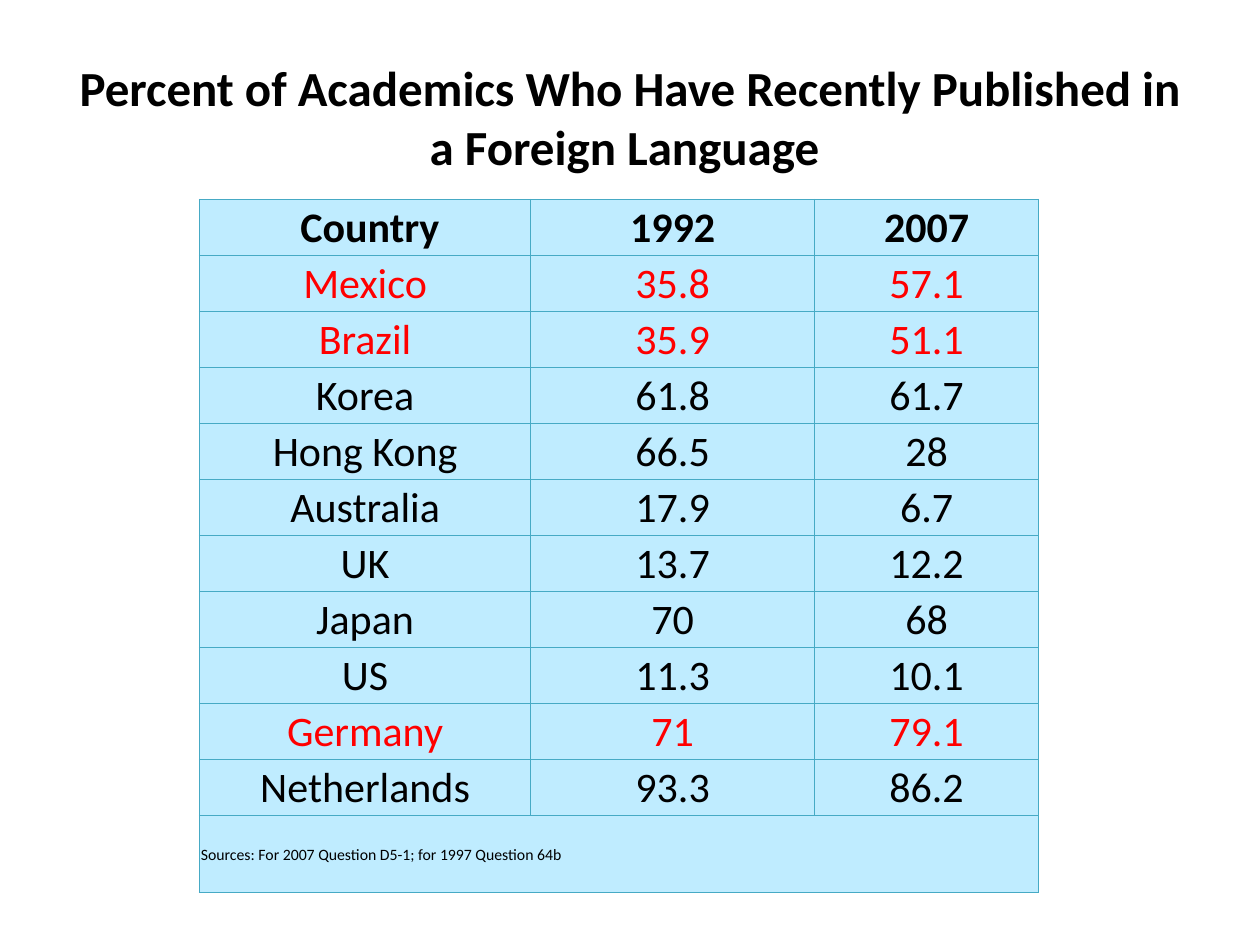
import pptx
import pptx.util
import pptx.dml.color
import pptx.enum.text
import pptx.oxml
import pptx.oxml.ns

Cm = pptx.util.Cm
Pt = pptx.util.Pt
ALIGN = pptx.enum.text.PP_ALIGN
MIDDLE = pptx.enum.text.MSO_ANCHOR.MIDDLE

COLORS = {"text": "000000", "accent": "FF0000", "fill": "BFECFF", "border": "46AAC5"}
FONT = "Calibri"
TITLE = "Percent of Academics Who Have Recently Published in a Foreign Language "
SOURCE = "Sources: For 2007 Question D5-1; for 1997 Question 64b"
ROWS = [
    (" Country", "1992", "2007"),
    ("Mexico", "35.8", "57.1"),
    ("Brazil", "35.9", "51.1"),
    ("Korea", "61.8", "61.7"),
    ("Hong Kong", "66.5", "28"),
    ("Australia", "17.9", "6.7"),
    ("UK", "13.7", "12.2"),
    ("Japan", "70", "68"),
    ("US", "11.3", "10.1"),
    ("Germany", "71", "79.1"),
    ("Netherlands", "93.3", "86.2"),
]
MARKED = {"Mexico", "Brazil", "Germany"}
WIDTHS = (6.68, 5.72, 4.52)


def rgb(name):
    return pptx.dml.color.RGBColor.from_string(COLORS[name])


def write(frame, text, size, color="text", bold=False, align=ALIGN.CENTER):
    line = frame.paragraphs[0]
    line.alignment = align
    run = line.add_run()
    run.text = text
    font = run.font
    font.name, font.size, font.bold = FONT, Pt(size), bold
    font.color.rgb = rgb(color)


def style(cell):
    cell.margin_left = cell.margin_right = cell.margin_top = Cm(0.03)
    cell.margin_bottom = 0
    cell.vertical_anchor = MIDDLE
    cell.fill.solid()
    cell.fill.fore_color.rgb = rgb("fill")
    props = cell._tc.get_or_add_tcPr()
    for spot, side in enumerate(("lnL", "lnR", "lnT", "lnB")):
        props.insert(spot, pptx.oxml.parse_xml(
            f'<a:{side} {pptx.oxml.ns.nsdecls("a")} w="{Pt(0.75)}"><a:solidFill>'
            f'<a:srgbClr val="{COLORS["border"]}"/></a:solidFill></a:{side}>'))


def add_title(slide, left, top, width, height):
    title = slide.shapes.title
    title.left, title.top = Cm(left), Cm(top)
    title.width, title.height = Cm(width), Cm(height)
    title.text_frame.vertical_anchor = MIDDLE
    write(title.text_frame, TITLE, 28, bold=True)


def add_grid(slide, left, top, height, foot):
    last = len(ROWS)
    frame = slide.shapes.add_table(last + 1, len(WIDTHS), Cm(left), Cm(top),
                                   Cm(sum(WIDTHS)), Cm(height))
    table = frame.table
    for column, width in zip(table.columns, WIDTHS):
        column.width = Cm(width)
    for row in table.rows:
        row.height = Cm((height - foot) / last)
    table.rows[last].height = Cm(foot)
    for cell in table.iter_cells():
        style(cell)
    for r, values in enumerate(ROWS):
        color = "accent" if values[0] in MARKED else "text"
        for c, value in enumerate(values):
            write(table.cell(r, c).text_frame, value, 24, color, bold=r == 0)
    note = table.cell(last, 0)
    note.merge(table.cell(last, len(WIDTHS) - 1))
    write(note.text_frame, SOURCE, 9, align=ALIGN.LEFT)


def main():
    deck = pptx.Presentation()
    deck.slide_width, deck.slide_height = Cm(25.4), Cm(19.05)
    slide = deck.slides.add_slide(deck.slide_layouts[5])
    add_title(slide, 1.27, 0.76, 22.86, 3.18)
    add_grid(slide, 4.02, 4.02, 13.97, 1.55)
    deck.save("out.pptx")


if __name__ == "__main__":
    main()
